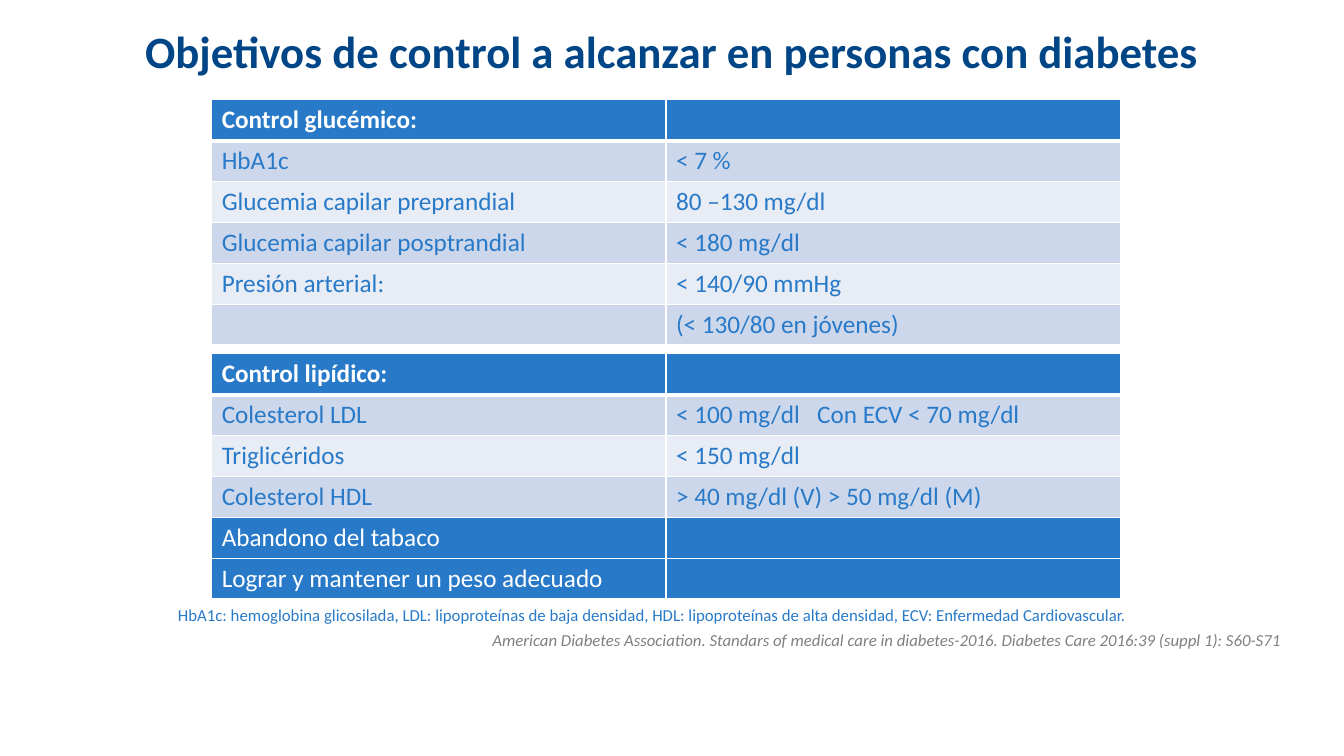
import pptx
import pptx.dml.color
import pptx.enum.text
import pptx.oxml
import pptx.oxml.ns
import pptx.util

RGBColor = pptx.dml.color.RGBColor
PP_ALIGN = pptx.enum.text.PP_ALIGN
MSO_ANCHOR = pptx.enum.text.MSO_ANCHOR

WHITE = RGBColor(0xFF, 0xFF, 0xFF)
NAVY = RGBColor(0x00, 0x45, 0x86)
BLUE = RGBColor(0x28, 0x7A, 0xC8)
DARK_BAND = RGBColor(0xCD, 0xD7, 0xEB)
LIGHT_BAND = RGBColor(0xE8, 0xEC, 0xF5)
GRAY = RGBColor(0x80, 0x80, 0x80)

GLYCEMIC_ROWS = [
    ("Control glucémico:", ""),
    ("HbA1c", "< 7 %"),
    ("Glucemia capilar preprandial", "80 –130 mg/dl"),
    ("Glucemia capilar posptrandial", "< 180 mg/dl"),
    ("Presión arterial:", "< 140/90 mmHg"),
    ("", "(< 130/80 en jóvenes)"),
]
LIPID_ROWS = [
    ("Control lipídico:", ""),
    ("Colesterol LDL", "< 100 mg/dl\tCon ECV < 70 mg/dl"),
    ("Triglicéridos", "< 150 mg/dl"),
    ("Colesterol HDL", "> 40 mg/dl (V) > 50 mg/dl (M)"),
    ("Abandono del tabaco", ""),
    ("Lograr y mantener un peso adecuado", ""),
]


class SlideBuilder:
    """Places elements on one slide; lengths are percentages of its size."""

    font_name = "Calibri"
    table_row_height = 5.33
    tab_stop = pptx.util.Inches(1.4)

    def __init__(self, presentation):
        self.width = presentation.slide_width
        self.height = presentation.slide_height
        self.slide = presentation.slides.add_slide(presentation.slide_layouts[5])

    def box(self, left, top, width, height):
        return {
            "left": round(self.width * left / 100),
            "top": round(self.height * top / 100),
            "width": round(self.width * width / 100),
            "height": round(self.height * height / 100),
        }

    def set_text(self, text_frame, text, size, color, align=PP_ALIGN.LEFT, **font_format):
        paragraph = text_frame.paragraphs[0]
        paragraph.text = text
        paragraph.alignment = align
        if "\t" in text:
            paragraph._p.get_or_add_pPr().append(pptx.oxml.parse_xml(
                f'<a:tabLst {pptx.oxml.ns.nsdecls("a")}>'
                f'<a:tab pos="{self.tab_stop}" algn="l"/></a:tabLst>'))
        values = {"name": self.font_name, "size": pptx.util.Pt(size), **font_format}
        fonts = [paragraph.font] + [run.font for run in paragraph.runs]
        for font in fonts:
            for name, value in values.items():
                setattr(font, name, value)
            font.color.rgb = color

    def fill_frame(self, shape, text, size, color, **text_format):
        frame_format = {
            "word_wrap": True,
            "auto_size": pptx.enum.text.MSO_AUTO_SIZE.NONE,
            "vertical_anchor": MSO_ANCHOR.MIDDLE,
        }
        for name, value in frame_format.items():
            setattr(shape.text_frame, name, value)
        self.set_text(shape.text_frame, text, size, color, **text_format)

    def title(self, text, *place):
        title = self.slide.shapes.title
        for name, value in self.box(*place).items():
            setattr(title, name, value)
        self.fill_frame(title, text, 32, NAVY, align=PP_ALIGN.CENTER, bold=True)

    def text(self, text, place, color, **text_format):
        shape = self.slide.shapes.add_textbox(**self.box(*place))
        self.fill_frame(shape, text, 12, color, **text_format)

    def border(self, cell, top_width, bottom_width):
        widths = {"lnL": 1, "lnR": 1, "lnT": top_width, "lnB": bottom_width}
        for tag, width in widths.items():
            cell._tc.get_or_add_tcPr().append(pptx.oxml.parse_xml(
                f'<a:{tag} {pptx.oxml.ns.nsdecls("a")} w="{pptx.util.Pt(width)}">'
                f'<a:solidFill><a:srgbClr val="{WHITE}"/></a:solidFill></a:{tag}>'))

    def table(self, rows, left, top, width, solid_rows):
        """Draws a two-column table; solid_rows are the indexes of its blue rows."""
        place = self.box(left, top, width, self.table_row_height * len(rows))
        table = self.slide.shapes.add_table(len(rows), 2, **place).table
        table.horz_banding = False
        for row_index, texts in enumerate(rows):
            table.rows[row_index].height = round(self.height * self.table_row_height / 100)
            solid = row_index in solid_rows
            band = DARK_BAND if row_index % 2 else LIGHT_BAND
            header = row_index == 0
            for column_index, text in enumerate(texts):
                cell = table.cell(row_index, column_index)
                cell.vertical_anchor = MSO_ANCHOR.MIDDLE
                self.border(cell, 3 if row_index == 1 else 1, 3 if header else 1)
                cell.fill.solid()
                cell.fill.fore_color.rgb = BLUE if solid else band
                self.set_text(cell.text_frame, text, 18, WHITE if solid else BLUE, bold=header)


def main():
    presentation = pptx.Presentation()
    presentation.slide_width = pptx.util.Inches(13.33)
    presentation.slide_height = pptx.util.Inches(7.5)

    builder = SlideBuilder(presentation)
    builder.title("Objetivos de control a alcanzar en personas con diabetes", 5, 2.27, 90, 8.8)
    builder.table(GLYCEMIC_ROWS, 15.75, 13.2, 67.6, solid_rows={0})
    builder.table(LIPID_ROWS, 15.75, 46.8, 67.6, solid_rows={0, 4, 5})
    builder.text(
        "HbA1c: hemoglobina glicosilada, LDL: lipoproteínas de baja densidad, "
        "HDL: lipoproteínas de alta densidad, ECV: Enfermedad Cardiovascular.",
        (12.5, 79.33, 75, 4), BLUE)
    builder.text(
        "American Diabetes Association. Standars of medical care in diabetes-2016. "
        "Diabetes Care 2016:39 (suppl 1): S60-S71",
        (1.05, 82.53, 95.05, 4.27), GRAY, align=PP_ALIGN.RIGHT, italic=True)
    presentation.save("out.pptx")


if __name__ == "__main__":
    main()
